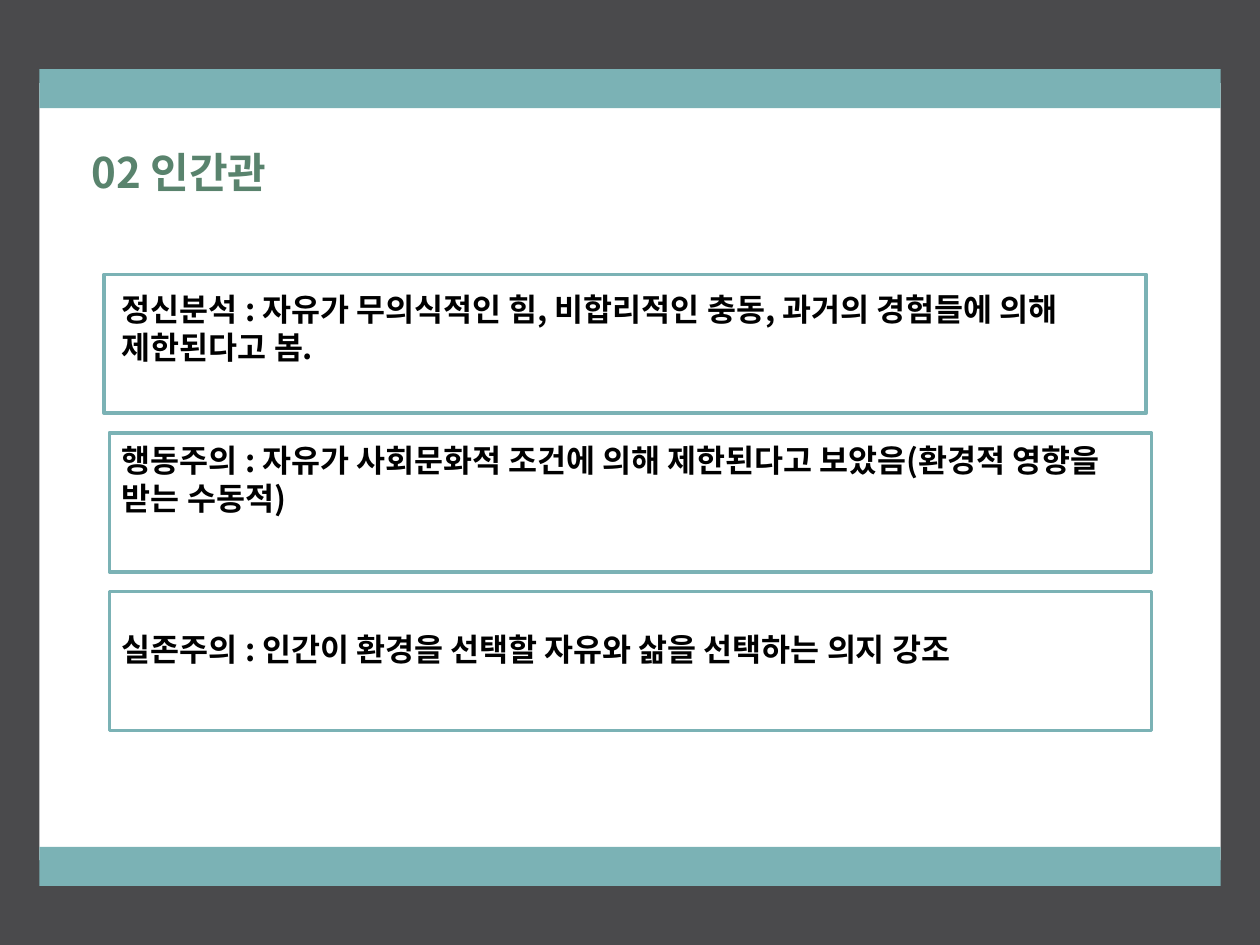
from pptx import Presentation
from pptx.dml.color import RGBColor
from pptx.enum.shapes import MSO_SHAPE
from pptx.enum.text import MSO_ANCHOR, PP_ALIGN
from pptx.oxml.ns import qn
from pptx.util import Pt
from lxml import etree

RECT = MSO_SHAPE.RECTANGLE
TOP = MSO_ANCHOR.TOP
LEFT = PP_ALIGN.LEFT
FONT = "Noto Sans CJK KR"
GREY, WHITE, TEAL, GREEN, BLACK = "4A4A4C", "FFFFFF", "7BB2B5", "59836D", "000000"

# Content
TITLE = "02 인간관"
# Each view with the number of blank lines above it
VIEWS = [
    ("정신분석 : 자유가 무의식적인 힘, 비합리적인 충동, 과거의 경험들에 의해 제한된다고 봄.", 0),
    ("행동주의 : 자유가 사회문화적 조건에 의해 제한된다고 보았음(환경적 영향을 받는 수동적)", 2),
    ("실존주의 : 인간이 환경을 선택할 자유와 삶을 선택하는 의지 강조", 3),
]
PANELS = [  # left, top, width, height, fill
    (0, 0, 720, 540, GREY),
    (22.5, 47.5, 675, 444, WHITE),
    (22.5, 484, 675, 22.3, TEAL),
    (22.5, 39.5, 675, 22.3, TEAL),
]
FRAME_X = [59.5, 62.5, 62.5]
FRAME_Y, FRAME_STEP = 156.75, 90.6


def color(code):
    return RGBColor.from_string(code)


def box(left, top, width, height, fill=None, line=None):
    shape = slide.shapes.add_shape(RECT, Pt(left), Pt(top), Pt(width), Pt(height))
    shape.shadow.inherit = False
    if fill:
        shape.fill.solid()
        shape.fill.fore_color.rgb = color(fill)
    else:
        shape.fill.background()
    if line:
        shape.line.color.rgb = color(line)
        shape.line.width = Pt(2)
    else:
        shape.line.fill.background()


def place(holder, left, top, width, height):
    holder.left, holder.top = Pt(left), Pt(top)
    holder.width, holder.height = Pt(width), Pt(height)
    frame = holder.text_frame
    frame.word_wrap = True
    frame.vertical_anchor = TOP
    # Keep the text in front of the panels
    slide.shapes._spTree.append(holder._element)
    return frame


def write(para, text, size=18, ink=BLACK, before=0):
    para.alignment = LEFT
    para.line_spacing = Pt(size * 1.2)
    para.space_before = Pt(before)
    props = para._p.get_or_add_pPr()
    props.set("marL", "0")
    props.set("indent", "0")
    etree.SubElement(props, qn("a:buNone"))
    run = para.add_run()
    run.text = text
    font = run.font
    font.name, font.size, font.bold = FONT, Pt(size), True
    font.color.rgb = color(ink)
    etree.SubElement(run._r.get_or_add_rPr(), qn("a:ea")).set("typeface", FONT)


deck = Presentation()
deck.slide_width, deck.slide_height = Pt(720), Pt(540)
slide = deck.slides.add_slide(deck.slide_layouts[1])
head, body = slide.placeholders

# Background panels and frames
for panel in PANELS:
    box(*panel)
for row, left in enumerate(FRAME_X):
    box(left, FRAME_Y + row * FRAME_STEP, 595.5, 79.4, line=TEAL)

# Title
frame = place(head, 45, 80, 186, 36)
write(frame.paragraphs[0], TITLE, size=24, ink=GREEN)

# Views
frame = place(body, 62.5, 162, 588, 234)
for row, (text, gap) in enumerate(VIEWS):
    para = frame.add_paragraph() if row else frame.paragraphs[0]
    write(para, text, before=gap * 21.6)

deck.save("out.pptx")
